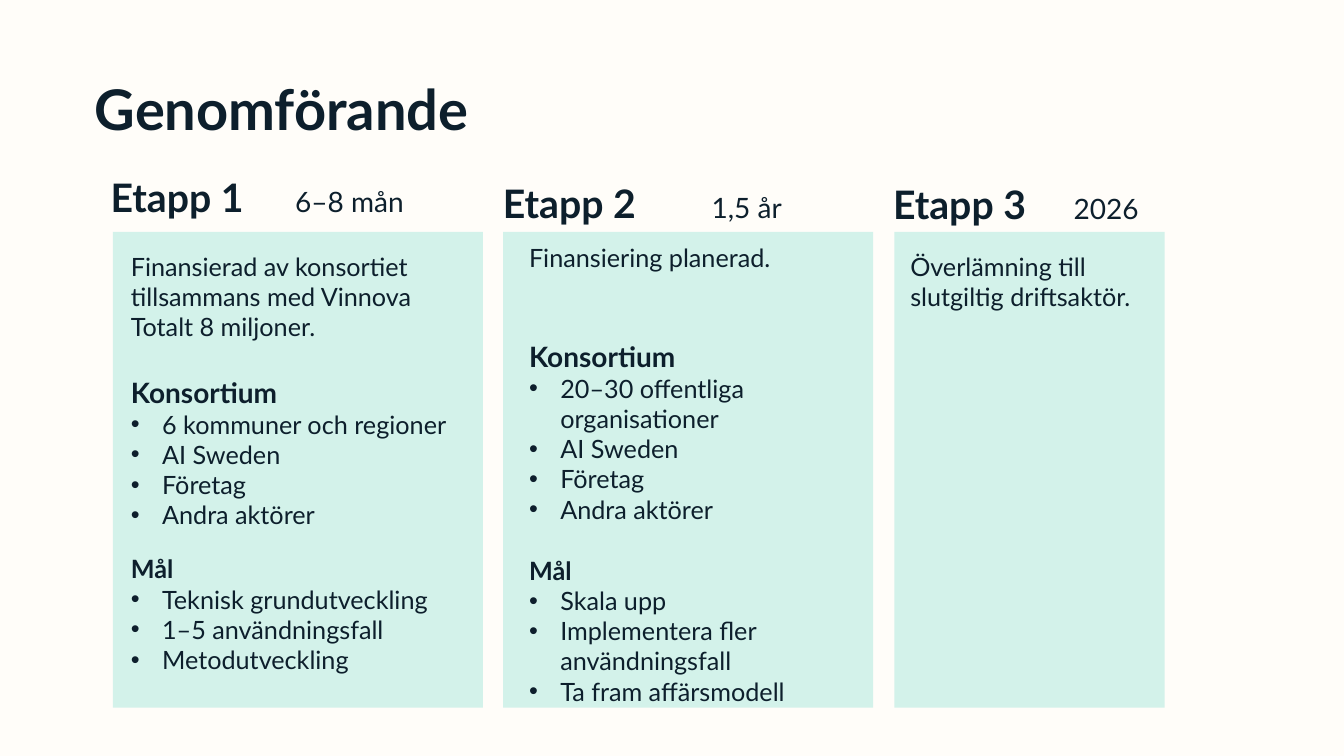
from lxml import etree
from pptx import Presentation
from pptx.dml.color import RGBColor
from pptx.enum.shapes import MSO_SHAPE
from pptx.enum.text import MSO_ANCHOR, MSO_AUTO_SIZE, PP_ALIGN
from pptx.oxml.ns import qn
from pptx.util import Inches, Pt

RECT = MSO_SHAPE.RECTANGLE
TOP, BOTTOM = MSO_ANCHOR.TOP, MSO_ANCHOR.BOTTOM
FIXED = MSO_AUTO_SIZE.NONE
LEFT = PP_ALIGN.LEFT

WIDTH, HEIGHT = Inches(13.33), Inches(7.5)
FONT = "Lato"
INK, MINT, CREAM = "0D1F2C", "D3F2EA", "FFFDF9"
CARD_TOP, CARD_HIGH = 30.67, 62.93
HEAD_HIGH = 9.6

# Stages: boxes are percent of the slide; head and body are (dx, dy, width)
# from the card's corner. Body lines are (kind, text, space before).
STAGES = [
    dict(name="Etapp 1", time="6–8 mån", tab=1.83, left=8.4, wide=27.53,
         head=(-0.9, -7.73, 31.66), anchor=TOP, body=(0.6, 1.87, 26.33),
         lines=[
             ("text", "Finansierad av konsortiet tillsammans med Vinnova "
                      "Totalt 8 miljoner.", 0),
             ("head", "Konsortium", 24),
             ("item", "6 kommuner och regioner", 0),
             ("item", "AI Sweden", 0),
             ("item", "Företag", 0),
             ("item", "Andra aktörer", 0),
             ("goal", "Mål", 17),
             ("item", "Teknisk grundutveckling", 0),
             ("item", "1–5 användningsfall", 0),
             ("item", "Metodutveckling", 0)]),
    dict(name="Etapp 2", time="1,5 år", tab=2.07, left=37.43, wide=27.53,
         head=(-0.75, -9.6, 30.38), anchor=BOTTOM, body=(1.2, 0.67, 27.91),
         lines=[
             ("text", "Finansiering planerad.", 0),
             ("head", "Konsortium", 48),
             ("item", "20–30 offentliga organisationer", 0),
             ("item", "AI Sweden", 0),
             ("item", "Företag", 0),
             ("item", "Andra aktörer", 0),
             ("goal", "Mål", 22),
             ("item", "Skala upp", 0),
             ("item", "Implementera fler användningsfall", 0),
             ("item", "Ta fram affärsmodell", 0)]),
    dict(name="Etapp 3", time="2026", tab=1.79, left=66.54, wide=20.11,
         head=(-0.83, -9.47, 26.78), anchor=BOTTOM, body=(0.45, 1.87, 18.53),
         lines=[("text", "Överlämning till slutgiltig driftsaktör.", 0)]),
]
STYLES = {
    "text": dict(size=18),
    "head": dict(size=20, bold=True),
    "goal": dict(size=18, bold=True),
    "item": dict(size=18),
}


def color(code):
    return RGBColor.from_string(code)


def area(left, top, wide, high):
    """Turn percent of the slide into lengths."""
    return (int(WIDTH * left / 100), int(HEIGHT * top / 100),
            int(WIDTH * wide / 100), int(HEIGHT * high / 100))


def write(para, text, size=18, bold=False):
    run = para.add_run()
    run.text = text
    font = run.font
    font.name, font.size, font.bold = FONT, Pt(size), bold
    font.color.rgb = color(INK)


def add_box(slide, box, anchor=TOP):
    frame = slide.shapes.add_textbox(*area(*box)).text_frame
    frame.word_wrap = True
    frame.vertical_anchor = anchor
    return frame


def add_bullet(para):
    props = para._p.get_or_add_pPr()
    props.set("marL", str(Inches(0.31)))
    props.set("indent", str(-Inches(0.31)))
    etree.SubElement(props, qn("a:buFont")).set("typeface", "Arial")
    etree.SubElement(props, qn("a:buChar")).set("char", "•")


def add_tab(para, place):
    tabs = etree.SubElement(para._p.get_or_add_pPr(), qn("a:tabLst"))
    stop = etree.SubElement(tabs, qn("a:tab"))
    stop.set("pos", str(Inches(place)))
    stop.set("algn", "l")


def add_title(slide, text, box):
    title = slide.shapes.title
    title.left, title.top, title.width, title.height = area(*box)
    frame = title.text_frame
    frame.auto_size = FIXED
    frame.vertical_anchor = TOP
    para = frame.paragraphs[0]
    para.alignment = LEFT
    write(para, text, size=40, bold=True)


def add_card(slide, box):
    card = slide.shapes.add_shape(RECT, *area(*box))
    card.shadow.inherit = False
    card.fill.solid()
    card.fill.fore_color.rgb = color(MINT)
    card.line.fill.background()


def add_stage(slide, stage):
    left = stage["left"]
    add_card(slide, (left, CARD_TOP, stage["wide"], CARD_HIGH))

    # Heading with its time span
    dx, dy, wide = stage["head"]
    frame = add_box(slide, (left + dx, CARD_TOP + dy, wide, HEAD_HIGH),
                    stage["anchor"])
    para = frame.paragraphs[0]
    para.line_spacing = 0.9
    add_tab(para, stage["tab"])
    write(para, stage["name"] + "\t", size=28, bold=True)
    write(para, stage["time"], size=20)

    # Body, down to the foot of the card
    dx, dy, wide = stage["body"]
    frame = add_box(slide, (left + dx, CARD_TOP + dy, wide, CARD_HIGH - dy))
    for index, (kind, text, gap) in enumerate(stage["lines"]):
        para = frame.add_paragraph() if index else frame.paragraphs[0]
        if gap:
            para.space_before = Pt(gap)
        if kind == "item":
            add_bullet(para)
        write(para, text, **STYLES[kind])


def main():
    deck = Presentation()
    deck.slide_width, deck.slide_height = WIDTH, HEIGHT
    slide = deck.slides.add_slide(deck.slide_layouts[5])
    slide.background.fill.solid()
    slide.background.fill.fore_color.rgb = color(CREAM)
    add_title(slide, "Genomförande", (6.3, 9.2, 50, 10.27))
    for stage in STAGES:
        add_stage(slide, stage)
    deck.save("out.pptx")


if __name__ == "__main__":
    main()
